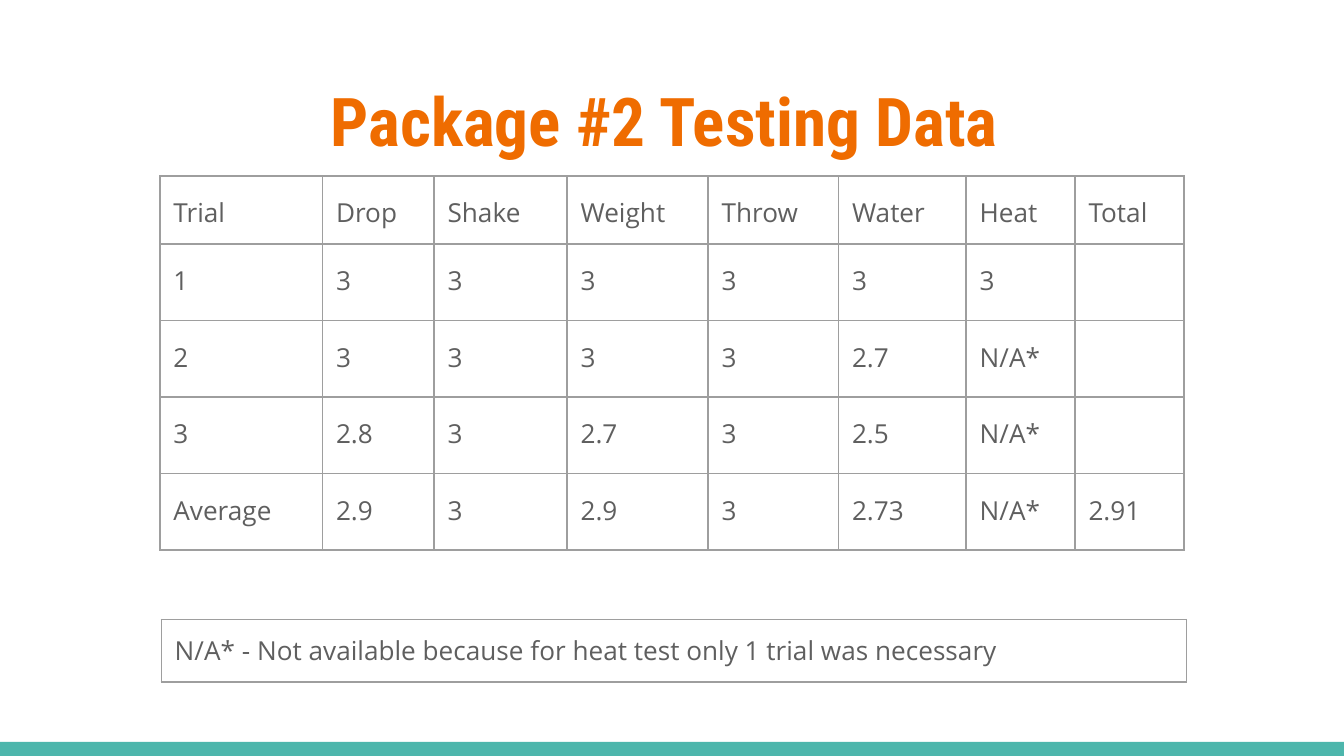
import pptx
import pptx.util
import pptx.dml.color
import pptx.enum.shapes
import pptx.enum.text
import pptx.oxml
import pptx.oxml.ns

Inches = pptx.util.Inches
Pt = pptx.util.Pt


def color(hex_value):
    return pptx.dml.color.RGBColor.from_string(hex_value)


def fill_table(table, rows, widths, heights, border_width, spacing):
    for column, width in zip(table.columns, widths):
        column.width = Inches(width)
    for row, height, values in zip(table.rows, heights, rows):
        row.height = Inches(height)
        for cell, value in zip(row.cells, values):
            cell.text = value
            for name, amount in cell_margins.items():
                setattr(cell, name, amount)
            paragraph = cell.text_frame.paragraphs[0]
            paragraph.line_spacing = spacing
            for run in paragraph.runs:
                for name, setting in cell_font.items():
                    setattr(run.font, name, setting)
                run.font.color.rgb = color("5F5F5F")
            properties = cell._tc.get_or_add_tcPr()
            for side in ("lnL", "lnR", "lnT", "lnB"):
                properties.append(pptx.oxml.parse_xml(
                    f'<a:{side} {pptx.oxml.ns.nsdecls("a")} w="{Pt(border_width)}">'
                    f'<a:solidFill><a:srgbClr val="9E9E9E"/></a:solidFill></a:{side}>'
                ))
            cell.fill.background()


cell_margins = {
    "margin_left": Inches(0.1),
    "margin_right": Inches(0.1),
    "margin_top": Inches(0.1),
    "margin_bottom": Inches(0.1),
}
cell_font = {"name": "Open Sans", "size": Pt(14), "bold": False}
title_font = {"name": "Roboto Condensed", "size": Pt(36), "bold": True}
title_box = {"left": Inches(0.34), "top": Inches(0.49),
             "width": Inches(9.32), "height": Inches(0.77)}

deck = pptx.Presentation()
deck.slide_width = Inches(10)
deck.slide_height = Inches(10) * 9 // 16
slide = deck.slides.add_slide(deck.slide_layouts[5])
slide.background.fill.solid()
slide.background.fill.fore_color.rgb = color("FFFFFF")

footer_band = slide.shapes.add_shape(
    pptx.enum.shapes.MSO_SHAPE.RECTANGLE,
    Inches(0), Inches(5.52), Inches(10), Inches(0.11))
footer_band.shadow.inherit = False
footer_band.fill.solid()
footer_band.fill.fore_color.rgb = color("4DB6AC")
footer_band.line.fill.background()

title = slide.shapes.title
for name, setting in title_box.items():
    setattr(title, name, setting)
title.text_frame.text = "Package #2 Testing Data "
title_frame = {
    **cell_margins,
    "word_wrap": True,
    "auto_size": pptx.enum.text.MSO_AUTO_SIZE.NONE,
    "vertical_anchor": pptx.enum.text.MSO_ANCHOR.TOP,
}
for name, setting in title_frame.items():
    setattr(title.text_frame, name, setting)
heading = title.text_frame.paragraphs[0]
heading.alignment = pptx.enum.text.PP_ALIGN.CENTER
for name, setting in title_font.items():
    setattr(heading.runs[0].font, name, setting)
heading.runs[0].font.color.rgb = color("EF6C00")

footnote = [["N/A* - Not available because for heat test only 1 trial was necessary"]]
trials = [
    ["Trial", "Drop", "Shake", "Weight", "Throw", "Water", "Heat", "Total"],
    ["1", "3", "3", "3", "3", "3", "3", ""],
    ["2", "3", "3", "3", "3", "2.7", "N/A*", ""],
    ["3", "2.8", "3", "2.7", "3", "2.5", "N/A*", ""],
    ["Average", "2.9", "3", "2.9", "3", "2.73", "N/A*", "2.91"],
]
trial_widths = [1.21, 0.83, 0.99, 1.05, 0.97, 0.95, 0.81, 0.81]
trial_heights = [0.43] + [0.57] * 4

tables = [
    (footnote, 1.2, 4.61, [7.63], [0.42], 0.75, 1.0),
    (trials, 1.19, 1.31, trial_widths, trial_heights, 1, 1.15),
]
for rows, left, top, widths, heights, border_width, spacing in tables:
    grid = slide.shapes.add_table(
        len(rows), len(widths), Inches(left), Inches(top),
        Inches(sum(widths)), Inches(sum(heights))).table
    grid.first_row = False
    grid.horz_banding = False
    fill_table(grid, rows, widths, heights, border_width, spacing)

deck.save("out.pptx")
